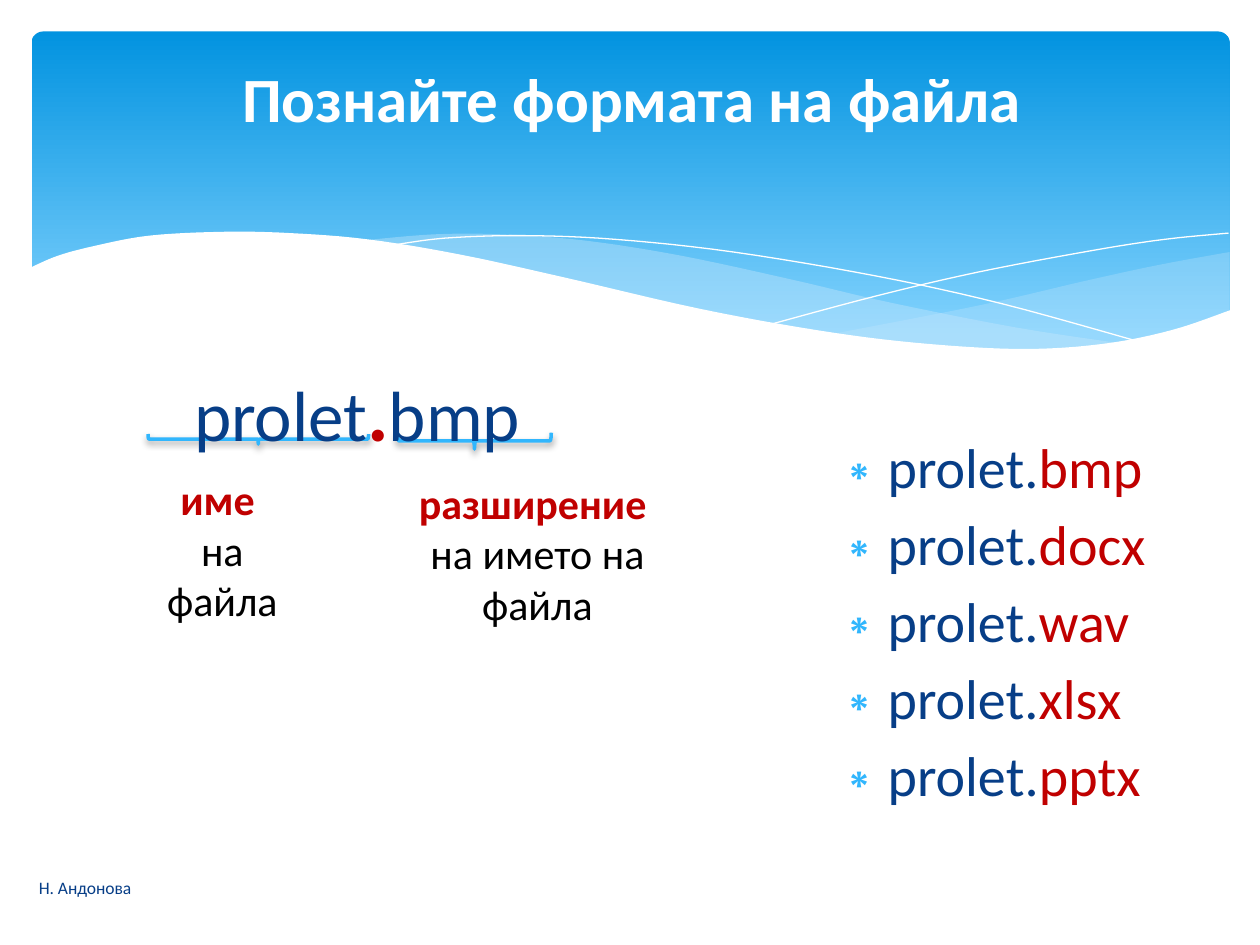
from dataclasses import dataclass

from lxml.etree import SubElement
from pptx import Presentation
from pptx.dml.color import RGBColor
from pptx.enum.shapes import MSO_SHAPE
from pptx.enum.text import MSO_ANCHOR, MSO_AUTO_SIZE, PP_ALIGN
from pptx.oxml.ns import qn
from pptx.util import Inches, Pt


@dataclass(frozen=True)
class Theme:
    font: str = "Calibri"
    white: str = "FFFFFF"
    black: str = "000000"
    navy: str = "073E87"
    red: str = "C00000"
    sky: str = "31B6FD"
    pale: str = "C6E7FC"
    top: str = "0293E0"
    low: str = "83D3FE"
    title: float = 36
    list: float = 32
    name: float = 40.6
    dot: float = 46.2
    label: float = 24
    foot: float = 10


T = Theme()

TITLE = "Познайте формата на файла"
FILES = [("prolet.", "bmp"), ("prolet.", "docx"), ("prolet.", "wav"),
         ("prolet.", "xlsx"), ("prolеt.", "pptx")]
# Each text box: place, anchor, alignment, paragraphs of (text, size, colour, bold)
BOXES = [
    ((0.21, 6.84, 4.14, 0.4), MSO_ANCHOR.MIDDLE, PP_ALIGN.LEFT,
     [[("Н. Андонова", T.foot, T.navy, False)]]),
    ((0.5, 2.81, 4.67, 0.73), MSO_ANCHOR.TOP, PP_ALIGN.CENTER,
     [[("prolet", T.name, T.navy, False), (".", T.dot, T.red, True),
       ("bmp", T.name, T.navy, False)]]),
    ((1.1, 3.71, 1.33, 1.3), MSO_ANCHOR.TOP, PP_ALIGN.CENTER,
     [[("име ", T.label, T.red, True)],
      [("на файла", T.label, T.black, False)]]),
    ((3.04, 3.74, 2.45, 1.3), MSO_ANCHOR.TOP, PP_ALIGN.CENTER,
     [[("разширение ", T.label, T.red, True)],
      [("на името на файла", T.label, T.black, False)]]),
]
BRACES = [(2.01, 2.61, 0.08, 1.75), (3.7, 2.89, 0.13, 1.22)]

# Each wave: fill, opacity in percent, knots of its curves
WAVES = [
    (T.pale, 29, [
        [(9.76, 2), (9.21, 2.1), (8.61, 2.23), (7.79, 2.42), (6.61, 2.65)],
        [(6.61, 2.65), (7.19, 2.72), (7.81, 2.77), (8.44, 2.77),
         (8.97, 2.7), (9.42, 2.59), (9.76, 2.47)]]),
    (T.pale, 40, [
        [(8.93, 2.73), (8.07, 2.6), (7.06, 2.4), (6.29, 2.22), (5.41, 2.03),
         (4.65, 1.91), (3.99, 1.86), (3.44, 1.86), (2.86, 1.91)],
        [(2.86, 1.91), (3.62, 2.03), (4.49, 2.22), (5.66, 2.48), (6.5, 2.64),
         (7.22, 2.74), (7.85, 2.78), (8.38, 2.78), (8.93, 2.73)]]),
    (None, 100, [
        [(3.09, 1.95), (3.53, 1.89), (4.16, 1.87), (4.89, 1.9), (5.82, 2),
         (6.95, 2.19), (7.95, 2.41), (9.07, 2.72)]]),
    (None, 100, [
        [(6.13, 2.57), (6.95, 2.35), (7.76, 2.16), (8.66, 1.99),
         (9.24, 1.9), (9.75, 1.85)]]),
    (T.white, 100, [
        [(9.77, 2.46), (9.3, 2.62), (8.75, 2.73), (8.09, 2.77), (7.26, 2.72),
         (6.48, 2.62), (5.55, 2.45), (4.47, 2.2), (3.65, 2.02), (2.92, 1.9),
         (2.3, 1.85), (1.77, 1.84), (1.19, 1.87), (0.76, 1.95), (0.46, 2.03),
         (0.23, 2.13)],
        [(0.23, 3.29), (9.77, 3.29)]]),
]


def rgb(code):
    return RGBColor.from_string(code)


def smooth(knots, steps=6):
    """Points of a Catmull-Rom curve through the knots."""
    ends = [knots[0], *knots, knots[-1]]
    pts = [knots[0]]
    for a, b, c, d in zip(ends, ends[1:], ends[2:], ends[3:]):
        for i in range(1, steps + 1):
            t = i / steps
            pts.append(tuple(
                (2 * q + (r - p) * t + (2 * p - 5 * q + 4 * r - s) * t ** 2
                 + (3 * q - p - 3 * r + s) * t ** 3) / 2
                for p, q, r, s in zip(a, b, c, d)))
    return pts


def put(part, box):
    part.left, part.top, part.width, part.height = map(Inches, box)


def add_run(para, text, size, color, bold=False):
    run = para.add_run()
    run.text = text
    font = run.font
    font.name, font.size, font.bold = T.font, Pt(size), bold
    font.color.rgb = rgb(color)


def add_band(shapes):
    band = shapes.add_shape(MSO_SHAPE.ROUNDED_RECTANGLE,
                            *map(Inches, (0.25, 0.25, 9.51, 2.7)))
    band.adjustments[0] = 0.034
    band.shadow.inherit = False
    band.line.fill.background()
    band.fill.gradient()
    band.fill.gradient_angle = 270
    for stop, color, pos in zip(band.fill.gradient_stops, (T.top, T.low), (0, 0.9)):
        stop.color.rgb, stop.position = rgb(color), pos


def add_wave(shapes, color, alpha, curves):
    pts = [(Inches(x), Inches(y)) for knots in curves for x, y in smooth(knots)]
    pen = shapes.build_freeform(*pts[0], scale=1.0)
    pen.add_line_segments(pts[1:], close=color is not None)
    wave = pen.convert_to_shape()
    wave.shadow.inherit = False
    if color is None:
        wave.fill.background()
        wave.line.color.rgb = rgb(T.white)
        wave.line.width = Pt(0)
        return
    wave.fill.solid()
    wave.fill.fore_color.rgb = rgb(color)
    if alpha < 100:
        tint = next(wave.element.iter(qn("a:srgbClr")))
        SubElement(tint, qn("a:alpha"), val=str(alpha * 1000))
    wave.line.fill.background()


def add_brace(shapes, box):
    brace = shapes.add_shape(MSO_SHAPE.LEFT_BRACE, *map(Inches, box))
    brace.rotation = 270
    brace.element.spPr.find(qn("a:xfrm")).set("flipV", "1")
    brace.fill.background()
    brace.line.color.rgb = rgb(T.sky)
    brace.line.width = Pt(2)
    brace.shadow.inherit = False
    glow = SubElement(brace.element.spPr.find(qn("a:effectLst")), qn("a:outerShdw"),
                      blurRad=str(Pt(4)), dist=str(Pt(2)), dir="5400000",
                      rotWithShape="0")
    shade = SubElement(glow, qn("a:srgbClr"), val=T.black)
    SubElement(shade, qn("a:alpha"), val="38000")


def add_text(shapes, box, anchor, align, paras):
    frame = shapes.add_textbox(*map(Inches, box)).text_frame
    frame.word_wrap, frame.vertical_anchor = True, anchor
    for i, runs in enumerate(paras):
        para = frame.add_paragraph() if i else frame.paragraphs[0]
        para.alignment = align
        for run in runs:
            add_run(para, *run)


def fill_title(title):
    put(title, (0.35, 0.36, 9.33, 0.83))
    title.text_frame.vertical_anchor = MSO_ANCHOR.MIDDLE
    para = title.text_frame.paragraphs[0]
    para.alignment = PP_ALIGN.CENTER
    add_run(para, TITLE, T.title, T.white, True)


def fill_list(body):
    put(body, (6.5, 3.38, 3.7, 3.12))
    frame = body.text_frame
    frame.auto_size, frame.vertical_anchor = MSO_AUTO_SIZE.NONE, MSO_ANCHOR.TOP
    for i, (stem, ext) in enumerate(FILES):
        para = frame.add_paragraph() if i else frame.paragraphs[0]
        para.space_before, para.space_after = Pt(0), Pt(5.6)
        props = para._p.get_or_add_pPr()
        props.set("marL", str(Inches(0.3)))
        props.set("indent", str(Inches(-0.3)))
        SubElement(SubElement(props, qn("a:buClr")), qn("a:srgbClr"), val=T.sky)
        SubElement(props, qn("a:buChar"), char="∗")
        add_run(para, stem, T.list, T.navy)
        add_run(para, ext, T.list, T.red)


def main():
    deck = Presentation()
    deck.slide_width, deck.slide_height = Inches(10), Inches(7.5)
    slide = deck.slides.add_slide(deck.slide_layouts[1])
    shapes = slide.shapes
    title, body = slide.placeholders
    add_band(shapes)
    for wave in WAVES:
        add_wave(shapes, *wave)
    fill_title(title)
    fill_list(body)
    for part in (title, body):  # bring the text in front of the waves
        shapes.element.append(part.element)
    for box in BRACES:
        add_brace(shapes, box)
    for box in BOXES:
        add_text(shapes, *box)
    deck.save("out.pptx")


if __name__ == "__main__":
    main()
